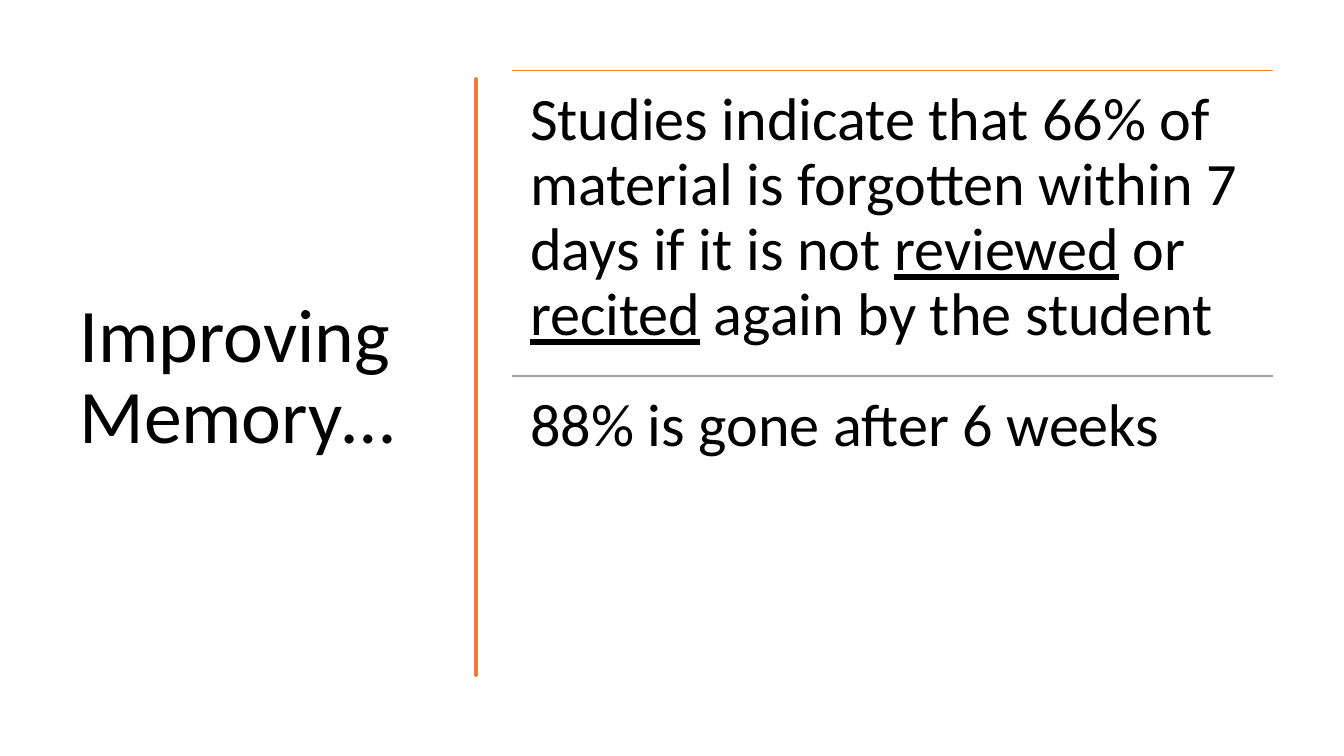
"""Build the slide on improving memory."""
from pptx import Presentation, util as u
from pptx.dml.color import RGBColor
from pptx.enum import shapes, text
from pptx.oxml import parse_xml
from pptx.oxml.ns import nsdecls

TITLE = "Improving Memory…"
FACTS = [
    ("orange", [("Studies indicate that 66% of material is forgotten within 7 "
                 "days if it is not ", False), ("reviewed", True), (" or ", False),
                ("recited", True), (" again by the student", False)]),
    ("gray", [("88% is gone after 6 weeks", False)]),
]
HEX = {"orange": "ED7D31", "gray": "A5A5A5", "black": "000000"}
FONT = "Calibri"
TOP = 2.13
EDGES = [
    (12.06, TOP, [(3.71, .05, .05), (5.74, -.05, .03), (7.47, -.03, 0),
                  (9.04, -.03, .05), (11.07, -.05, .1), (12.95, -.1, -.08),
                  (14.83, .05, .05), (17.17, -.05, .03)]),
    (12.01, 17.17, [(15.57, .03, -.05), (14.15, .03, .03), (12.12, -.03, 0),
                    (10.54, 0, -.05), (8.51, .03, -.03), (6.35, .03, -.03),
                    (4.6, .03, .05), (TOP, -.08, .1)]),
]
LEFT, RIGHT, FIRST, PITCH = 12.9, 32.08, 1.78, 7.69
STEPS = 8


def color(name):
    return RGBColor.from_string(HEX[name])


def style(obj, **vals):
    for key, val in vals.items():
        setattr(obj, key, val)


def write(para, runs, size):
    para.line_spacing = 0.9
    for words, under in runs:
        run = para.add_run()
        run.text = words
        style(run.font, name=FONT, size=u.Pt(size), underline=under)
        run.font.color.rgb = color("black")


def trace(base, start, bends):
    points = [(base, start)]
    for end, near, far in bends:
        for step in range(1, STEPS + 1):
            t = step / STEPS
            sway = 3 * t * (1 - t) * ((1 - t) * near + t * far)
            points.append((base + sway, start + t * (end - start)))
        start = end
    return points


def add_stroke(slide):
    points = [p for edge in EDGES for p in trace(*edge)]
    form = slide.shapes.build_freeform(*points[0], scale=u.Cm(1))
    form.add_line_segments(points[1:], close=True)
    bar = form.convert_to_shape()
    bar.shadow.inherit = False
    bar.fill.solid()
    bar.fill.fore_color.rgb = bar.line.color.rgb = color("orange")
    bar.line.width = u.Pt(3.25)
    bar.line._get_or_add_ln().append(parse_xml(f"<a:round {nsdecls('a')}/>"))


def add_fact(slide, row, hue, runs):
    y = u.Cm(FIRST + row * PITCH)
    rule = slide.shapes.add_connector(
        shapes.MSO_CONNECTOR.STRAIGHT, u.Cm(LEFT), y, u.Cm(RIGHT), y)
    rule.line.color.rgb = color(hue)
    rule.line.width = u.Pt(1)
    rule._element.spPr.append(parse_xml(f"<a:effectLst {nsdecls('a')}/>"))
    box = slide.shapes.add_textbox(
        u.Cm(LEFT), y, u.Cm(RIGHT - LEFT), u.Cm(PITCH))
    pad = u.Cm(0.46)
    style(box.text_frame, word_wrap=True, margin_left=pad, margin_right=pad,
          margin_top=pad, margin_bottom=pad)
    write(box.text_frame.paragraphs[0], runs, 43)


def main():
    deck = Presentation()
    style(deck, slide_width=u.Cm(33.87), slide_height=u.Cm(19.05))
    slide = deck.slides.add_slide(deck.slide_layouts[5])
    title = slide.shapes.title
    style(title, left=u.Cm(1.75), top=u.Cm(1.78), width=u.Cm(9.5),
          height=u.Cm(15.52))
    style(title.text_frame, word_wrap=True, auto_size=text.MSO_AUTO_SIZE.NONE,
          vertical_anchor=text.MSO_ANCHOR.MIDDLE)
    head = title.text_frame.paragraphs[0]
    head.alignment = text.PP_ALIGN.LEFT
    write(head, [(TITLE, False)], 54)
    add_stroke(slide)
    for row, (hue, runs) in enumerate(FACTS):
        add_fact(slide, row, hue, runs)
    deck.save("out.pptx")


if __name__ == "__main__":
    main()
